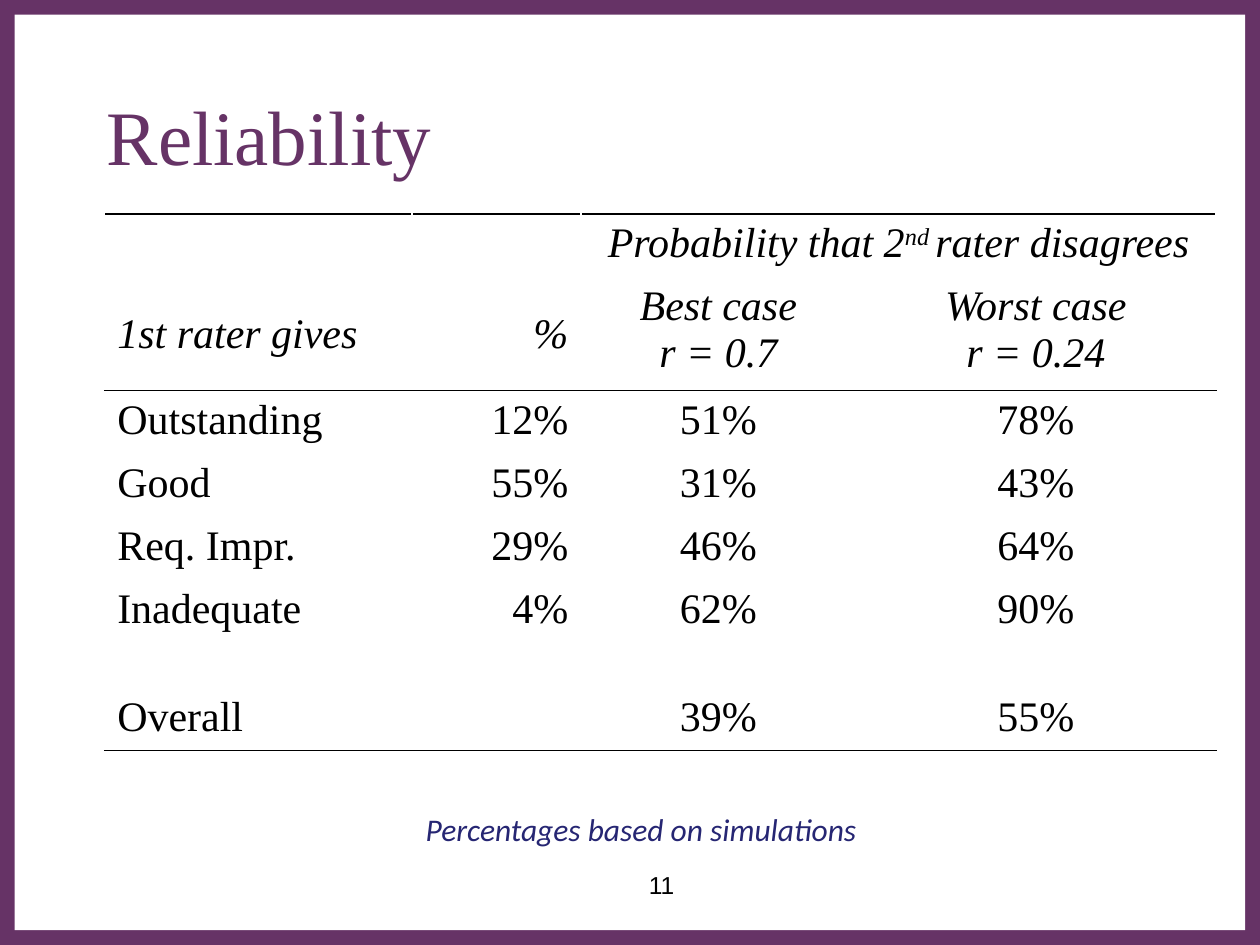
import pptx
import pptx.dml.color
import pptx.enum.shapes
import pptx.enum.text
import pptx.oxml
import pptx.oxml.ns
import pptx.util

Pt = pptx.util.Pt
ALIGN = pptx.enum.text.PP_ALIGN
ANCHOR = pptx.enum.text.MSO_ANCHOR
PURPLE, WHITE, BLACK, NAVY = "663366", "FFFFFF", "000000", "262673"
SERIF = "Times New Roman"

COLUMN_WIDTHS = [175.7, 96.5, 157, 205.9]
ROW_HEIGHTS = [33.7, 60.4, 33.7, 33.7, 33.7, 33.7, 25.6, 33.7]
COLUMN_ALIGNMENTS = [ALIGN.LEFT, ALIGN.RIGHT, ALIGN.CENTER, ALIGN.CENTER]
HEADER_ROWS = 2
ROWS = [
    ["", "", "Probability that 2^nd ^rater disagrees", ""],
    ["1st rater gives", "%", "Best case\nr = 0.7", "Worst case\nr = 0.24"],
    ["Outstanding", "12%", "51%", "78%"],
    ["Good", "55%", "31%", "43%"],
    ["Req. Impr.", "29%", "46%", "64%"],
    ["Inadequate", "4%", "62%", "90%"],
    ["", "", "", ""],
    ["Overall", "", "39%", "55%"],
]
RULED_EDGES = {0, HEADER_ROWS, len(ROWS)}


def color(value):
    return pptx.dml.color.RGBColor.from_string(value)


def write_text(frame, text, size=24, font=SERIF, fill=BLACK, italic=False,
               align=ALIGN.LEFT):
    """Write one paragraph a line; text between carets is superscript."""
    for index, line in enumerate(text.split("\n")):
        paragraph = frame.paragraphs[0] if index == 0 else frame.add_paragraph()
        paragraph.alignment = align
        for position, part in enumerate(line.split("^")):
            run = paragraph.add_run()
            run.text = part
            run.font.size = Pt(size)
            run.font.name = font
            run.font.italic = italic
            run.font.color.rgb = color(fill)
            if position % 2:
                run.font._element.set("baseline", "30000")


def add_label(slide, box, text, anchor=ANCHOR.TOP, **text_format):
    label = slide.shapes.add_textbox(*map(Pt, box))
    label.text_frame.word_wrap = True
    label.text_frame.vertical_anchor = anchor
    write_text(label.text_frame, text, **text_format)


def add_frame(slide, box, border):
    left, top, width, height = box
    for inset, fill in ((0, PURPLE), (border, WHITE)):
        panel = slide.shapes.add_shape(
            pptx.enum.shapes.MSO_SHAPE.RECTANGLE,
            Pt(left + inset), Pt(top + inset),
            Pt(width - 2 * inset), Pt(height - 2 * inset))
        panel.shadow.inherit = False
        panel.fill.solid()
        panel.fill.fore_color.rgb = color(fill)
        panel.line.fill.background()


def set_cell_borders(cell, **sides):
    properties = cell._tc.get_or_add_tcPr()
    for side, value in sides.items():
        properties.append(pptx.oxml.parse_xml(
            f'<a:ln{side} {pptx.oxml.ns.nsdecls("a")} w="12700"><a:solidFill>'
            f'<a:srgbClr val="{value}"/></a:solidFill></a:ln{side}>'))


def set_empty_size(cell, size):
    """Keep an empty cell from growing its row."""
    cell._tc.txBody.p_lst[0].append(pptx.oxml.parse_xml(
        f'<a:endParaRPr {pptx.oxml.ns.nsdecls("a")} sz="{size * 100}"/>'))


def add_reliability_table(slide, left, top):
    table = slide.shapes.add_table(
        len(ROWS), len(COLUMN_WIDTHS), Pt(left), Pt(top),
        Pt(sum(COLUMN_WIDTHS)), Pt(sum(ROW_HEIGHTS))).table
    table.first_row = table.horz_banding = False
    for column, width in zip(table.columns, COLUMN_WIDTHS):
        column.width = Pt(width)
    for row, height in zip(table.rows, ROW_HEIGHTS):
        row.height = Pt(height)
    table.cell(0, 2).merge(table.cell(0, 3))

    for row_index, texts in enumerate(ROWS):
        top_edge, bottom_edge = (
            BLACK if edge in RULED_EDGES else WHITE
            for edge in (row_index, row_index + 1))
        for column_index, text in enumerate(texts):
            cell = table.cell(row_index, column_index)
            set_cell_borders(cell, L=WHITE, R=WHITE, T=top_edge, B=bottom_edge)
            cell.fill.solid()
            cell.fill.fore_color.rgb = color(WHITE)
            if row_index == 1 and column_index < 2:
                cell.vertical_anchor = ANCHOR.MIDDLE
            if text:
                write_text(cell.text_frame, text,
                           italic=row_index < HEADER_ROWS,
                           align=COLUMN_ALIGNMENTS[column_index])
            else:
                set_empty_size(cell, 12)


def main():
    presentation = pptx.Presentation()
    presentation.slide_width = Pt(720)
    presentation.slide_height = Pt(540)
    slide = presentation.slides.add_slide(presentation.slide_layouts[6])

    add_frame(slide, (0, 0, 720, 540), 8.4)
    add_label(slide, (54, 31.7, 612, 90), "Reliability", size=44, fill=PURPLE,
              anchor=ANCHOR.MIDDLE)
    add_reliability_table(slide, 59.8, 122.4)
    add_label(slide, (303.1, 493.9, 149.8, 33.8), "11", size=14, font="Arial",
              align=ALIGN.CENTER)
    add_label(slide, (236.2, 459.4, 266.4, 28.8), "Percentages based on simulations",
              size=18, font="Calibri", fill=NAVY, italic=True)
    presentation.save("out.pptx")


if __name__ == "__main__":
    main()
